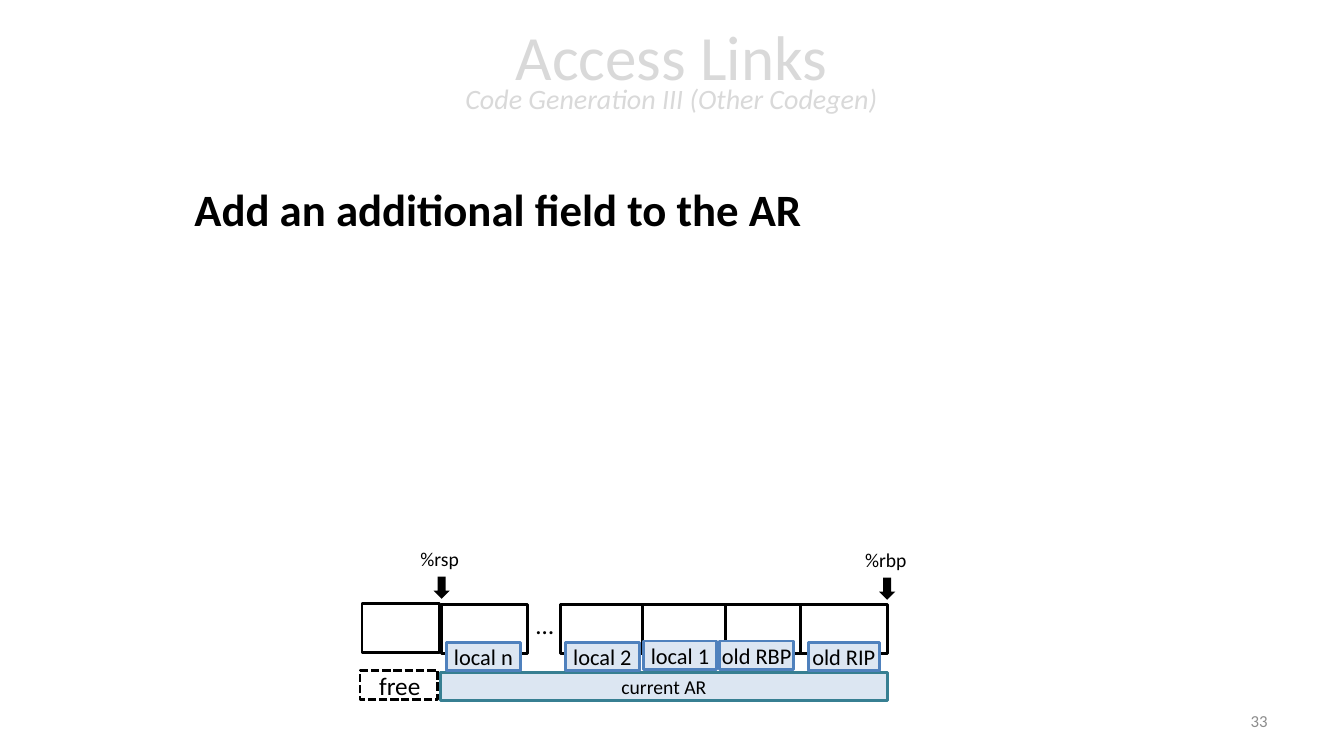
"""Build the Access Links slide showing the layout of an activation record."""
from pptx import Presentation, util as u
from pptx.dml.color import RGBColor
from pptx.enum import dml, shapes, text

PX = u.Inches(1) // 100
BLACK, WHITE, PALE, BLUE, TEAL = "000000", "FFFFFF", "DCE6F2", "4F81BD", "377F92"
LEFT, CENTER, RIGHT = text.PP_ALIGN.LEFT, text.PP_ALIGN.CENTER, text.PP_ALIGN.RIGHT
TOP, MIDDLE = text.MSO_ANCHOR.TOP, text.MSO_ANCHOR.MIDDLE

TITLE = [("Access Links", 45, False), ("Code Generation III (Other Codegen)", 20, True)]
HEADING = "Add an additional field to the AR"
PAGE = "33"
CELLS = [(438, 600, 85), (556, 600, 81), (637, 600, 88), (720, 600, 74),
         (794, 600, 86), (359, 599, 77)]
FIELDS = [("local n", 443, 637, 73), ("local 2", 561, 637, 73), ("local 1", 638, 636, 73),
          ("old RBP", 714, 636, 73), ("old RIP", 802, 637, 70)]
REGISTERS = [("%rsp", 417, 543, 40, 430), ("%rbp", 858, 544, 42, 872)]
CELL_H, FIELD_H = 48, 28
ARROW_W, ARROW_H, ARROW_DROP = 16, 22, 29

deck = Presentation()
deck.slide_width, deck.slide_height = 1333 * PX, 750 * PX
slide = deck.slides.add_slide(deck.slide_layouts[6])


def color(code):
    return RGBColor.from_string(code)


def write(holder, lines, size=18, ink=BLACK, bold=False, align=LEFT, anchor=TOP,
          inset=(10, 5, 10, 5), wrap=True, spacing=None):
    """Put text, or (text, size, italic) lines, in a shape."""
    frame = holder.text_frame
    frame.word_wrap, frame.vertical_anchor = wrap, anchor
    frame.margin_left, frame.margin_top, frame.margin_right, frame.margin_bottom = (
        side * PX for side in inset)
    paragraph = frame.paragraphs[0]
    paragraph.alignment = align
    if spacing:
        paragraph.line_spacing = spacing
    if isinstance(lines, str):
        lines = [(lines, size, False)]
    for index, (words, points, italic) in enumerate(lines):
        if index:
            paragraph.add_line_break()
        run = paragraph.add_run()
        run.text = words
        run.font.name, run.font.size = "Calibri", u.Pt(points)
        run.font.bold, run.font.italic = bold, italic
        run.font.color.rgb = color(ink)


def label(box, lines, **style):
    write(slide.shapes.add_textbox(*(side * PX for side in box)), lines, **style)


def block(box, fill=None, line=None, kind=shapes.MSO_SHAPE.RECTANGLE):
    part = slide.shapes.add_shape(kind, *(side * PX for side in box))
    part.shadow.inherit = False
    if fill:
        part.fill.solid()
        part.fill.fore_color.rgb = color(fill)
    else:
        part.fill.background()
    if line:
        part.line.color.rgb = color(line)
        part.line.width = u.Pt(2)
    else:
        part.line.fill.background()
    return part


label((235, 3, 862, 145), TITLE, ink="D9D9D9", align=CENTER, anchor=MIDDLE, spacing=0.7)
label((183, 175, 894, 250), HEADING, size=32, bold=True)
label((956, 695, 311, 40), PAGE, size=12, ink="8C8C8C", align=RIGHT, anchor=MIDDLE)

for x, y, width in CELLS:
    block((x, y, width, CELL_H), WHITE, BLACK)

current = block((437, 667, 443, 28), PALE, TEAL)
write(current, "current AR", size=14, align=CENTER, anchor=MIDDLE)
free = block((357, 665, 77, 29), line=BLACK)
free.line.dash_style = dml.MSO_LINE.SQUARE_DOT
write(free, "free", align=CENTER, inset=(2, 0, 0, 0))

for name, x, y, width in FIELDS:
    field = block((x, y, width, FIELD_H), PALE, BLUE)
    write(field, name, size=16, align=CENTER, anchor=MIDDLE, inset=(0, 5, 0, 5))

for name, x, y, width, arrow_x in REGISTERS:
    block((arrow_x, y + ARROW_DROP, ARROW_W, ARROW_H), BLACK,
          kind=shapes.MSO_SHAPE.DOWN_ARROW)
    label((x, y, width, 24), name, size=14, inset=(0, 0, 0, 0), wrap=False)

label((522, 600, 38, 40), "…", wrap=False)

deck.save("out.pptx")
